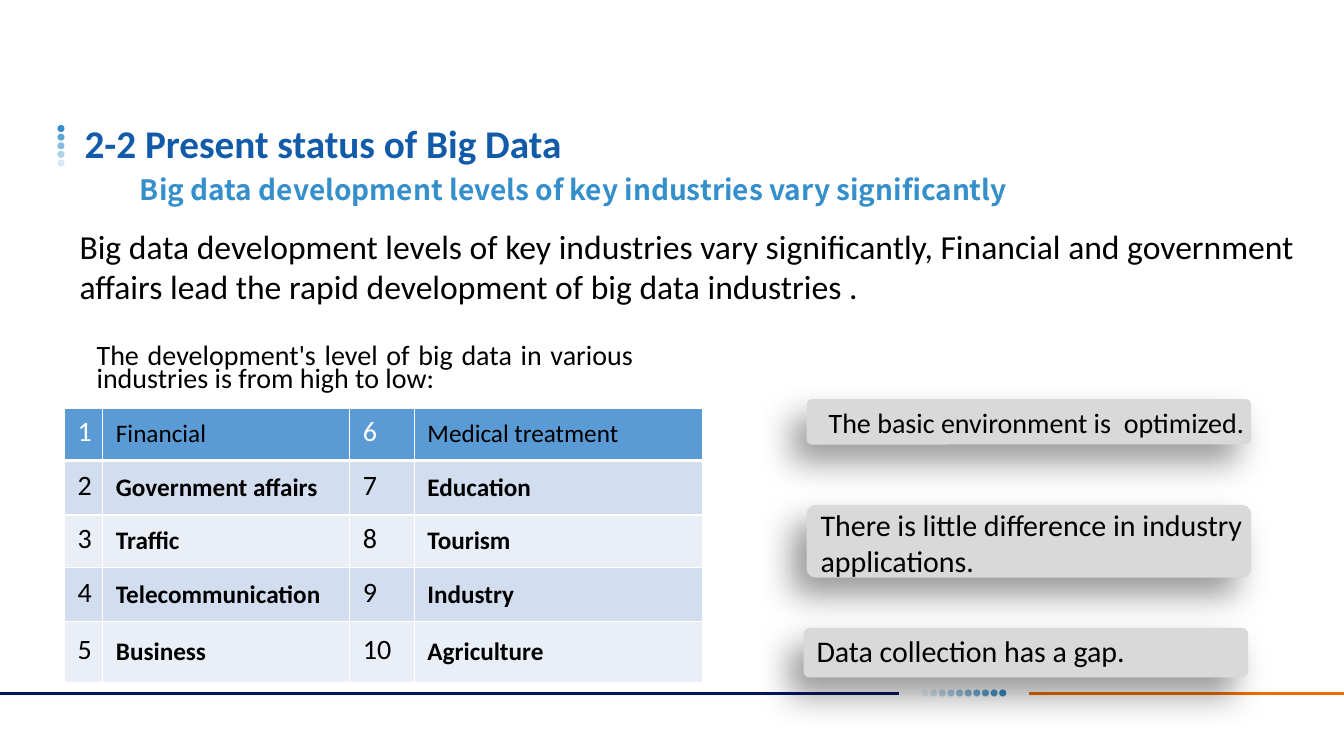
import pptx
import pptx.util
import pptx.dml.color
import pptx.enum.shapes
import pptx.enum.text
import pptx.oxml
import pptx.oxml.ns
import lxml.etree

Inches, Pt = pptx.util.Inches, pptx.util.Pt
SHAPE = pptx.enum.shapes.MSO_SHAPE
ALIGN = pptx.enum.text.PP_ALIGN
BLUE = "358FCB"

# Content: text, box, size, font, colour, bold, wrap, align, line spacing
TEXTS = [
    ("2-2 Present status of Big Data",
     (0.74, 1.13, 10.11, 0.57), 28, "Calibri", "125BA9", True, True, None, None),
    ("Big data development levels of key industries vary significantly",
     (1.29, 1.66, 9.1, 0.44), 20, "Noto Sans CJK SC", BLUE, True, False, None, None),
    ("Big data development levels of key industries vary significantly, "
     "Financial and government affairs lead the rapid development of big data industries .",
     (0.69, 2.19, 12.49, 0.9), 24, "Calibri", "000000", False, True, None, None),
    ("The development's level of big data in various industries is from high to low:",
     (0.86, 3.39, 5.52, 0.57), 20, "Calibri", "000000", False, True, ALIGN.JUSTIFY, 0.7),
]
INDUSTRIES = ["Financial", "Government affairs", "Traffic", "Telecommunication", "Business",
              "Medical treatment", "Education", "Tourism", "Industry", "Agriculture"]
COL_WIDTHS = [0.38, 2.45, 0.64, 2.86]
ROW_HEIGHTS = [0.52, 0.54, 0.52, 0.54, 0.6]
# Finding: text, panel box, text box, size
FINDINGS = [
    ("The basic environment is  optimized.",
     (8, 3.96, 4.41, 0.45), (8.12, 3.97, 4.68, 0.43), 20),
    ("There is little difference in industry applications.",
     (8, 5.01, 4.41, 0.72), (8.04, 4.98, 5.02, 0.81), 21.4),
    ("Data collection has a gap.",
     (7.97, 6.23, 4.41, 0.49), (8, 6.23, 3.58, 0.46), 21.4),
]
RULES = [(0, 8.92, "051661"), (10.21, 13.33, "ED6D02")]
RULE_Y = 6.88
DOT, DOT_STEP = 0.07, 0.0856

prs = pptx.Presentation()
prs.slide_width, prs.slide_height = Inches(13.33), Inches(7.5)
s = prs.slides.add_slide(prs.slide_layouts[6])


def rgb(value):
    return pptx.dml.color.RGBColor.from_string(value)


def add_xml(parent, xml):
    ns = pptx.oxml.ns.nsdecls("a")
    parent.append(pptx.oxml.parse_xml(xml.replace("NS", ns, 1)))


def style(p, size, font, color, bold):
    p.font.size, p.font.name, p.font.bold = Pt(size), font, bold
    p.font.color.rgb = rgb(color)


def add_text(text, box, size, font, color, bold, wrap=True, align=None, spacing=None):
    tf = s.shapes.add_textbox(*map(Inches, box)).text_frame
    tf.word_wrap = wrap
    p = tf.paragraphs[0]
    p.text, p.alignment, p.line_spacing = text, align, spacing
    style(p, size, font, color, bold)


def add_shape(kind, box, color):
    sp = s.shapes.add_shape(kind, *map(Inches, box))
    sp.shadow.inherit = False
    sp.fill.solid()
    sp.fill.fore_color.rgb = rgb(color)
    sp.line.fill.background()
    return sp


def add_dot(x, y, opacity):
    sp = add_shape(SHAPE.OVAL, (x, y, DOT, DOT), BLUE)
    if opacity < 100:
        color = sp.fill._xPr.find(".//" + pptx.oxml.ns.qn("a:srgbClr"))
        add_xml(color, f'<a:alpha NS val="{opacity * 1000}"/>')


# Footer rules and dots
for x1, x2, color in RULES:
    c = s.shapes.add_connector(pptx.enum.shapes.MSO_CONNECTOR.STRAIGHT,
                               Inches(x1), Inches(RULE_Y), Inches(x2), Inches(RULE_Y))
    c.line.color.rgb, c.line.width = rgb(color), Pt(1.5)
    add_xml(c._element.spPr, "<a:effectLst NS/>")
for i in range(10):
    add_dot(9.14 + i * DOT_STEP, 6.84, 10 * (i + 1))

# Title marker and texts
for i in range(5):
    add_dot(0.57, 1.24 + i * DOT_STEP, 100 - 20 * i)
for item in TEXTS:
    add_text(*item)

# Ranking table: ranks 1-5 on the left, 6-10 on the right
rows = len(ROW_HEIGHTS)
table = s.shapes.add_table(rows, len(COL_WIDTHS), Inches(0.64), Inches(4.05),
                           Inches(sum(COL_WIDTHS)), Inches(sum(ROW_HEIGHTS))).table
for column, width in zip(table.columns, COL_WIDTHS):
    column.width = Inches(width)
for row, height in zip(table.rows, ROW_HEIGHTS):
    row.height = Inches(height)
for i in range(rows):
    header = i == 0
    fill = "5B9BD5" if header else ("EAEFF7", "D2DEEF")[i % 2]
    for j in range(len(COL_WIDTHS)):
        cell = table.cell(i, j)
        rank = i + rows * (j // 2)
        is_name = j % 2 == 1
        cell.margin_left = cell.margin_right = Inches(0.13)
        cell.margin_top = cell.margin_bottom = Inches(0.07)
        cell.vertical_anchor = pptx.enum.text.MSO_ANCHOR.MIDDLE
        p = cell.text_frame.paragraphs[0]
        p.text = INDUSTRIES[rank] if is_name else str(rank + 1)
        p.line_spacing = Pt(21.6)
        style(p, 18 if is_name else 20, "Calibri",
              "FFFFFF" if header and not is_name else "000000", is_name and not header)
        for side in "LRTB":
            thick = (header and side == "B") or (i == 1 and side == "T")
            add_xml(cell._tc.get_or_add_tcPr(),
                    f'<a:ln{side} NS w="{Pt(3 if thick else 1)}"><a:solidFill>'
                    f'<a:srgbClr val="FFFFFF"/></a:solidFill></a:ln{side}>')
        cell.fill.solid()
        cell.fill.fore_color.rgb = rgb(fill)

# Findings on shadowed panels
for text, panel, box, size in FINDINGS:
    sp = add_shape(SHAPE.ROUNDED_RECTANGLE, panel, "D9D9D9")
    sp.adjustments[0] = 0.12
    effects = sp._element.spPr.find(pptx.oxml.ns.qn("a:effectLst"))
    add_xml(effects, f'<a:outerShdw NS blurRad="{Pt(24)}" dist="{Pt(16)}" dir="{130 * 60000}" '
                     'algn="ctr" rotWithShape="0"><a:srgbClr val="000000">'
                     '<a:alpha val="40000"/></a:srgbClr></a:outerShdw>')
    add_text(text, box, size, "Calibri", "000000", False)

prs.save("out.pptx")
